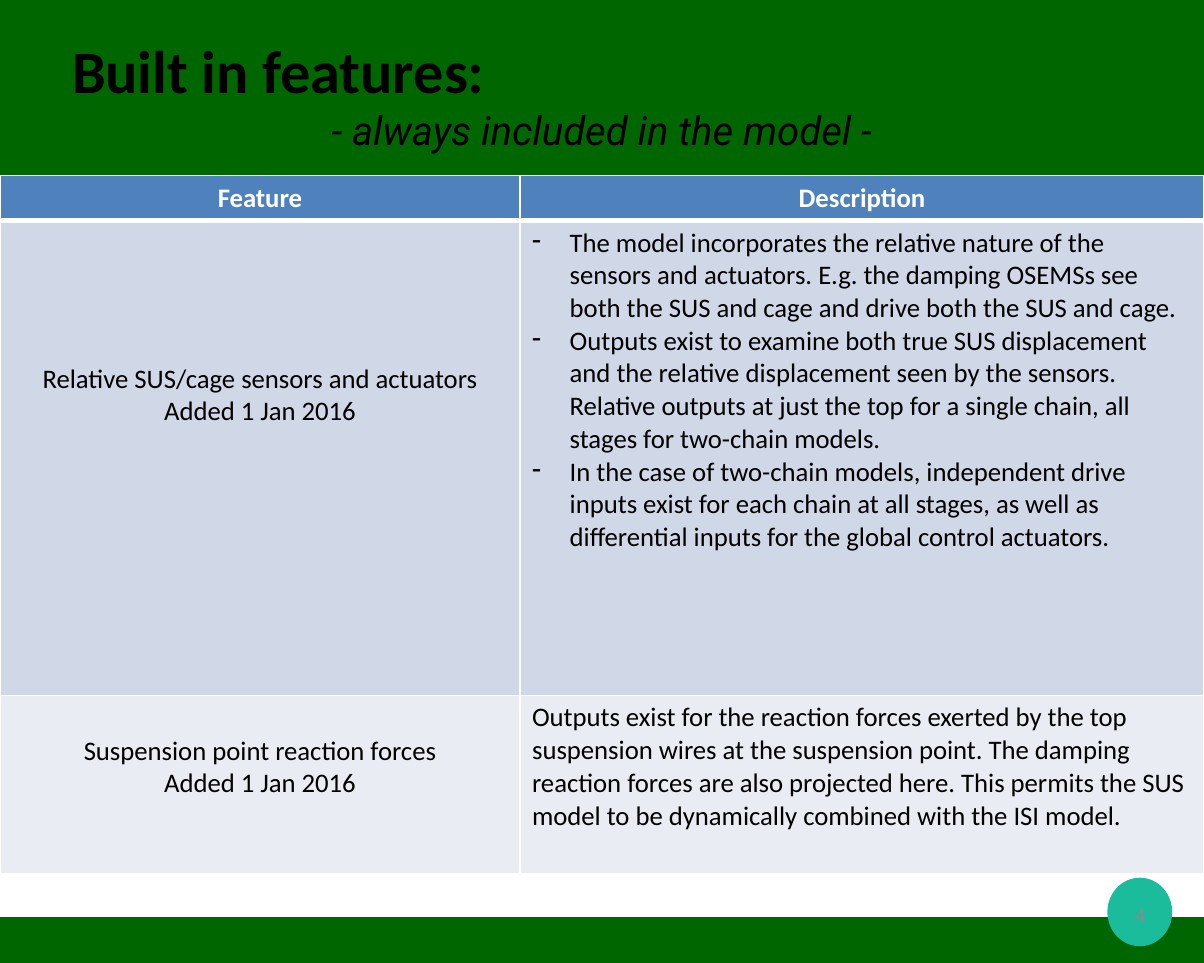
from lxml import etree
from pptx import Presentation
from pptx import util as u
from pptx.dml import color
from pptx.enum import shapes, text
from pptx.oxml import ns

Pt = u.Pt
LEFT, CENTER, RIGHT = text.PP_ALIGN.LEFT, text.PP_ALIGN.CENTER, text.PP_ALIGN.RIGHT
GREEN, TEAL, BLACK, WHITE, GREY = "006600", "1ABC9C", "000000", "FFFFFF", "8B8B8B"
BLUE, BAND_DARK, BAND_LIGHT = "4F81BD", "D0D8E7", "E9ECF3"
COLUMNS = (311, 409)
ROWS = (27, 284, 106.6)
HEADINGS = ("Feature", "Description")
SENSORS = ("Relative SUS/cage sensors and actuators", "Added 1 Jan 2016")
SENSOR_NOTES = (
    "The model incorporates the relative nature of the sensors and actuators. "
    "E.g. the damping OSEMSs see both the SUS and cage and drive both the SUS and cage.",
    "Outputs exist to examine both true SUS displacement and the relative displacement "
    "seen by the sensors. Relative outputs at just the top for a single chain, all stages "
    "for two-chain models.",
    "In the case of two-chain models, independent drive inputs exist for each chain at all "
    "stages, as well as differential inputs for the global control actuators.",
)
FORCES = ("Suspension point reaction forces", "Added 1 Jan 2016")
FORCE_NOTES = (
    "Outputs exist for the reaction forces exerted by the top suspension wires at the "
    "suspension point. The damping reaction forces are also projected here. This permits "
    "the SUS model to be dynamically combined with the ISI model.",
)


def paint(fill, hex_color):
    fill.solid()
    fill.fore_color.rgb = color.RGBColor.from_string(hex_color)


def add_block(slide, kind, *box, fill):
    block = slide.shapes.add_shape(kind, *map(Pt, box))
    block.shadow.inherit = False
    paint(block.fill, fill)
    block.line.fill.background()


def write(paragraph, words, size, ink=BLACK, align=LEFT, face="Calibri",
          bold=False, italic=False):
    paragraph.text = words
    paragraph.alignment = align
    font = paragraph.font
    font.name, font.size, font.bold, font.italic = face, Pt(size), bold, italic
    font.color.rgb = color.RGBColor.from_string(ink)


def add_text_frame(slide, *box):
    frame = slide.shapes.add_textbox(*map(Pt, box)).text_frame
    frame.word_wrap = True
    frame.vertical_anchor = text.MSO_ANCHOR.MIDDLE
    return frame


def add_dash(paragraph):
    properties = paragraph._p.get_or_add_pPr()
    properties.set("marL", str(Pt(22.5)))
    properties.set("indent", str(-Pt(22.5)))
    etree.SubElement(properties, ns.qn("a:buChar")).set("char", "-")


def add_borders(cell, top, bottom):
    properties = cell._tc.get_or_add_tcPr()
    for side, width in (("L", 0.96), ("R", 0.96), ("T", top), ("B", bottom)):
        edge = etree.SubElement(properties, ns.qn("a:ln" + side), w=str(Pt(width)))
        solid = etree.SubElement(edge, ns.qn("a:solidFill"))
        etree.SubElement(solid, ns.qn("a:srgbClr"), val=WHITE)


def fill_cell(cell, lines, fill, top=0.96, bottom=0.96, drop=3.6, dashed=False, **style):
    add_borders(cell, top, bottom)
    paint(cell.fill, fill)
    cell.margin_top = Pt(drop)
    frame = cell.text_frame
    for index, line in enumerate(lines):
        paragraph = frame.add_paragraph() if index else frame.paragraphs[0]
        write(paragraph, line, 16, **style)
        if dashed:
            add_dash(paragraph)


def add_features(slide):
    features = slide.shapes.add_table(
        len(ROWS), len(COLUMNS), 0, Pt(105), Pt(sum(COLUMNS)), Pt(sum(ROWS))).table
    for column, width in zip(features.columns, COLUMNS):
        column.width = Pt(width)
    for row, height in zip(features.rows, ROWS):
        row.height = Pt(height)
    for index, heading in enumerate(HEADINGS):
        fill_cell(features.cell(0, index), [heading], BLUE, bottom=3,
                  ink=WHITE, align=CENTER, bold=True)
    fill_cell(features.cell(1, 0), SENSORS, BAND_DARK, top=3, drop=84.9, align=CENTER)
    fill_cell(features.cell(1, 1), SENSOR_NOTES, BAND_DARK, top=3, dashed=True)
    fill_cell(features.cell(2, 0), FORCES, BAND_LIGHT, drop=23.4, align=CENTER)
    fill_cell(features.cell(2, 1), FORCE_NOTES, BAND_LIGHT)


def main():
    deck = Presentation()
    deck.slide_width, deck.slide_height = Pt(720), Pt(576)
    slide = deck.slides.add_slide(deck.slide_layouts[6])

    kinds = shapes.MSO_SHAPE
    add_block(slide, kinds.RECTANGLE, 0, 548.6, 720, 27.4, fill=GREEN)
    add_block(slide, kinds.RECTANGLE, 0, 0, 720, 108, fill=GREEN)
    add_block(slide, kinds.OVAL, 662.2, 525, 38.8, 41, fill=TEAL)

    title = add_text_frame(slide, 36, 8, 648, 96)
    write(title.paragraphs[0], "Built in features:", 36, bold=True)
    write(title.add_paragraph(), "- always included in the model -", 24,
          align=CENTER, face="Roboto", italic=True)

    add_features(slide)

    page = add_text_frame(slide, 524, 531.4, 168, 31)
    write(page.paragraphs[0], "4", 12, ink=GREY, align=RIGHT)
    deck.save("out.pptx")


if __name__ == "__main__":
    main()
